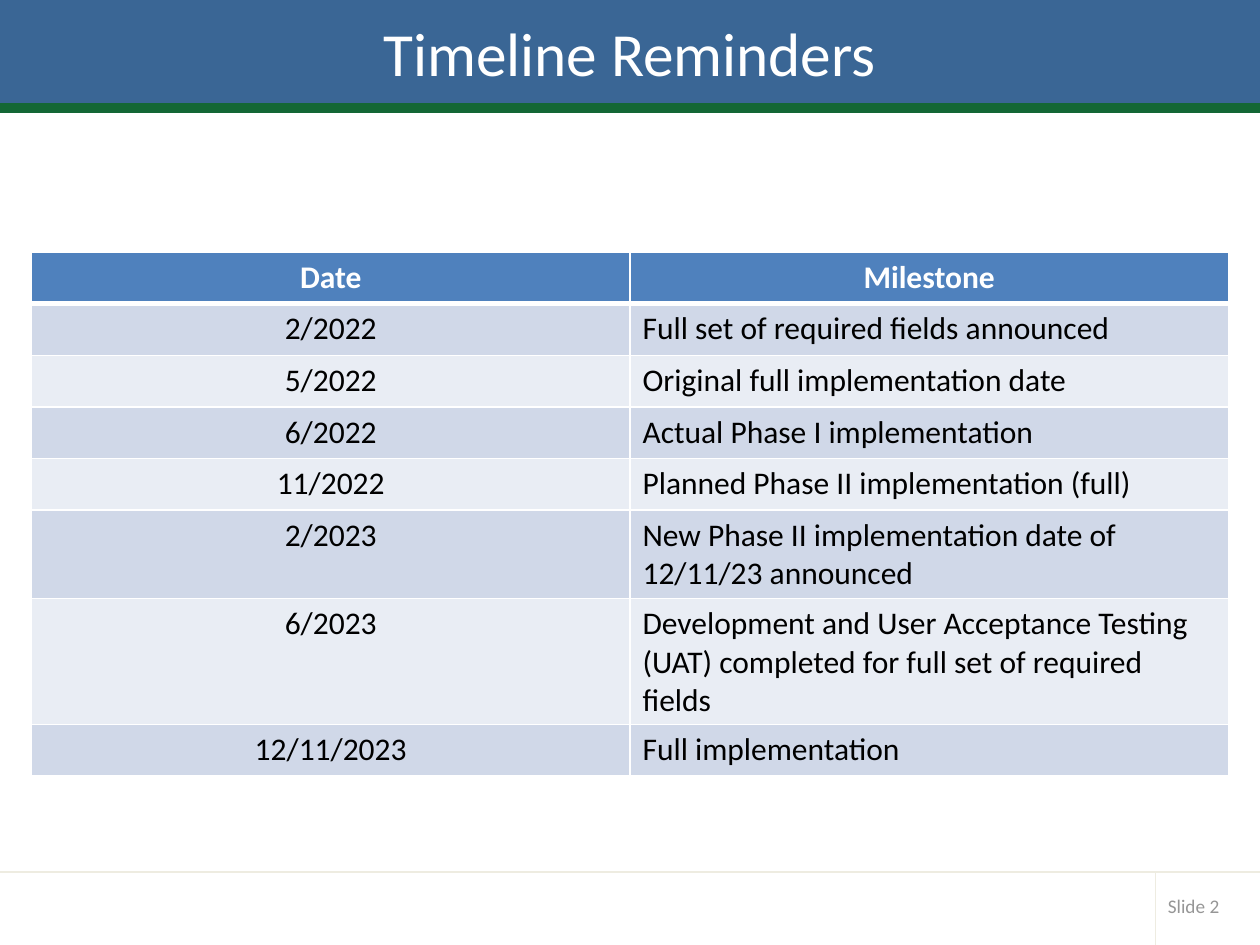
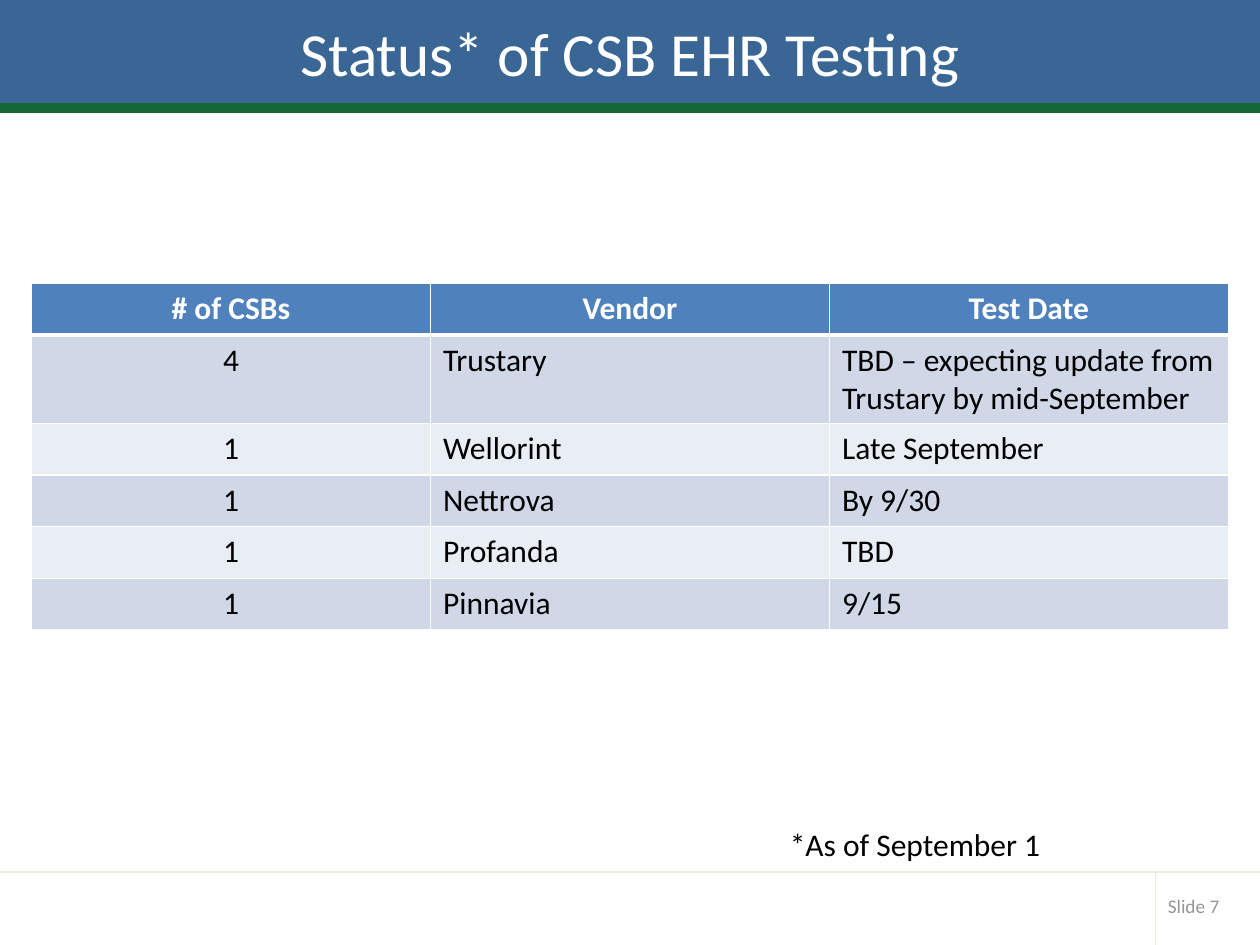
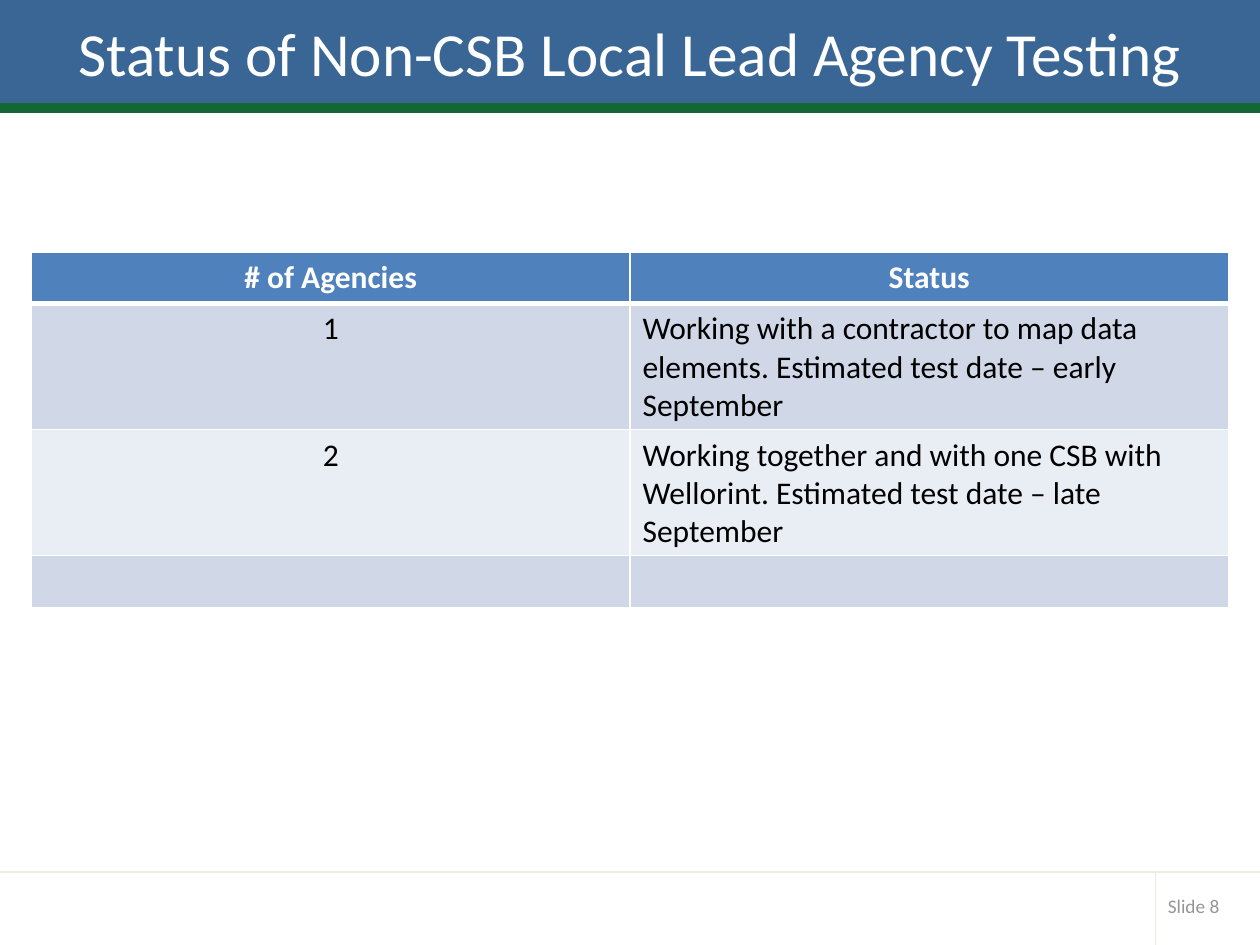
"""Build three status slides on testing and implementation dates."""
import dataclasses

import lxml.etree
import pptx
import pptx.dml.color
import pptx.enum.shapes
import pptx.enum.text
import pptx.oxml.ns
import pptx.util

Inches = pptx.util.Inches
Pt = pptx.util.Pt
Align = pptx.enum.text.PP_ALIGN
Anchor = pptx.enum.text.MSO_ANCHOR
qn = pptx.oxml.ns.qn


@dataclasses.dataclass(frozen=True)
class Theme:
    font: str = "Calibri"
    title_size: int = 35
    body_size: int = 18
    footer_size: int = 11
    white: str = "FFFFFF"
    black: str = "000000"
    title_band: str = "3A6695"
    accent_band: str = "136735"
    rule: str = "EEECE1"
    footer: str = "969696"
    header: str = "4F81BD"
    stripes: tuple = ("D0D8E8", "E9EDF4")


class Deck:
    WIDTH, HEIGHT = 10, 7.5
    BAND_HEIGHT, ACCENT_HEIGHT = 0.83, 0.05
    FOOTER_TOP, NUMBER_LEFT = 6.92, 9.17
    TABLE_LEFT, TABLE_WIDTH, ROW_HEIGHT = 0.25, 9.5, 0.41

    def __init__(self, theme):
        self.theme = theme
        self.presentation = pptx.Presentation()
        self.presentation.slide_width = Inches(self.WIDTH)
        self.presentation.slide_height = Inches(self.HEIGHT)
        self.slide = None

    def color(self, value):
        return pptx.dml.color.RGBColor.from_string(value)

    def start_slide(self, title, number):
        theme = self.theme
        self.slide = self.presentation.slides.add_slide(self.presentation.slide_layouts[6])
        self.band(0, self.BAND_HEIGHT, theme.title_band)
        self.band(self.BAND_HEIGHT, self.ACCENT_HEIGHT, theme.accent_band)
        self.line(0, self.FOOTER_TOP, self.WIDTH, self.FOOTER_TOP)
        self.line(self.NUMBER_LEFT, self.FOOTER_TOP, self.NUMBER_LEFT, self.HEIGHT)
        self.text(f"Slide {number}", (self.NUMBER_LEFT, 7.04, 0.74, 0.29),
                  theme.footer_size, theme.footer, anchor=Anchor.MIDDLE)
        self.text(title, (0, 0, self.WIDTH, self.BAND_HEIGHT),
                  theme.title_size, theme.white, Align.CENTER, Anchor.MIDDLE)

    def band(self, top, height, color):
        band = self.slide.shapes.add_shape(
            pptx.enum.shapes.MSO_SHAPE.RECTANGLE,
            Inches(0), Inches(top), Inches(self.WIDTH), Inches(height))
        band.shadow.inherit = False
        band.fill.solid()
        band.fill.fore_color.rgb = self.color(color)
        band.line.color.rgb = self.color(color)
        band.line.width = Pt(2)

    def line(self, *ends):
        rule = self.slide.shapes.add_connector(
            pptx.enum.shapes.MSO_CONNECTOR.STRAIGHT, *map(Inches, ends))
        rule.line.color.rgb = self.color(self.theme.rule)
        rule.line.width = Pt(1)
        lxml.etree.SubElement(rule._element.spPr, qn("a:effectLst"))

    def text(self, words, place, size, color, align=Align.LEFT, anchor=Anchor.TOP):
        frame = self.slide.shapes.add_textbox(*map(Inches, place)).text_frame
        frame.word_wrap = True
        frame.vertical_anchor = anchor
        frame.text = words
        self.format(frame, size, color, align)

    def format(self, frame, size, color, align, bold=False):
        for paragraph in frame.paragraphs:
            paragraph.alignment = align
            for run in paragraph.runs:
                run.font.name = self.theme.font
                run.font.size = Pt(size)
                run.font.bold = bold
                run.font.color.rgb = self.color(color)

    def table(self, top, rows):
        theme = self.theme
        columns = len(rows[0])
        grid = self.slide.shapes.add_table(
            len(rows), columns, Inches(self.TABLE_LEFT), Inches(top),
            Inches(self.TABLE_WIDTH), Inches(self.ROW_HEIGHT * len(rows))).table
        for column in grid.columns:
            column.width = Inches(self.TABLE_WIDTH / columns)
        for r, row in enumerate(rows):
            is_header = r == 0
            fill = theme.header if is_header else theme.stripes[(r - 1) % 2]
            for c, words in enumerate(row):
                cell = grid.cell(r, c)
                self.borders(cell, top=3 if r == 1 else 1, bottom=3 if is_header else 1)
                cell.fill.solid()
                cell.fill.fore_color.rgb = self.color(fill)
                cell.text_frame.text = words
                self.format(cell.text_frame, theme.body_size,
                            theme.white if is_header else theme.black,
                            Align.CENTER if is_header or c == 0 else Align.LEFT, is_header)

    def borders(self, cell, top, bottom):
        properties = cell._tc.get_or_add_tcPr()
        for side, width in (("L", 1), ("R", 1), ("T", top), ("B", bottom)):
            edge = lxml.etree.SubElement(properties, qn(f"a:ln{side}"), w=str(Pt(width)))
            fill = lxml.etree.SubElement(edge, qn("a:solidFill"))
            lxml.etree.SubElement(fill, qn("a:srgbClr"), val=self.theme.white)


def main():
    theme = Theme()
    deck = Deck(theme)

    deck.start_slide("Timeline Reminders", 2)
    deck.table(2, [
        ("Date", "Milestone"),
        ("2/2022", "Full set of required fields announced"),
        ("5/2022", "Original full implementation date"),
        ("6/2022", "Actual Phase I implementation"),
        ("11/2022", "Planned Phase II implementation (full)"),
        ("2/2023", "New Phase II implementation date of 12/11/23 announced"),
        ("6/2023", "Development and User Acceptance Testing (UAT) completed "
                   "for full set of required fields"),
        ("12/11/2023", "Full implementation"),
    ])

    deck.start_slide("Status* of CSB EHR Testing", 7)
    deck.table(2.25, [
        ("# of CSBs", "Vendor", "Test Date"),
        ("4", "Trustary", "TBD – expecting update from Trustary by mid-September"),
        ("1", "Wellorint", "Late September"),
        ("1", "Nettrova", "By 9/30"),
        ("1", "Profanda", "TBD"),
        ("1", "Pinnavia", "9/15"),
    ])
    deck.text("*As of September 1", (6.17, 6.5, 3.5, 0.4), theme.body_size, theme.black)

    deck.start_slide("Status of Non-CSB Local Lead Agency Testing", 8)
    deck.table(2, [
        ("# of Agencies", "Status"),
        ("1", "Working with a contractor to map data elements. "
              "Estimated test date – early September"),
        ("2", "Working together and with one CSB with Wellorint. "
              "Estimated test date – late September"),
        ("", ""),
    ])

    deck.presentation.save("out.pptx")


if __name__ == "__main__":
    main()
